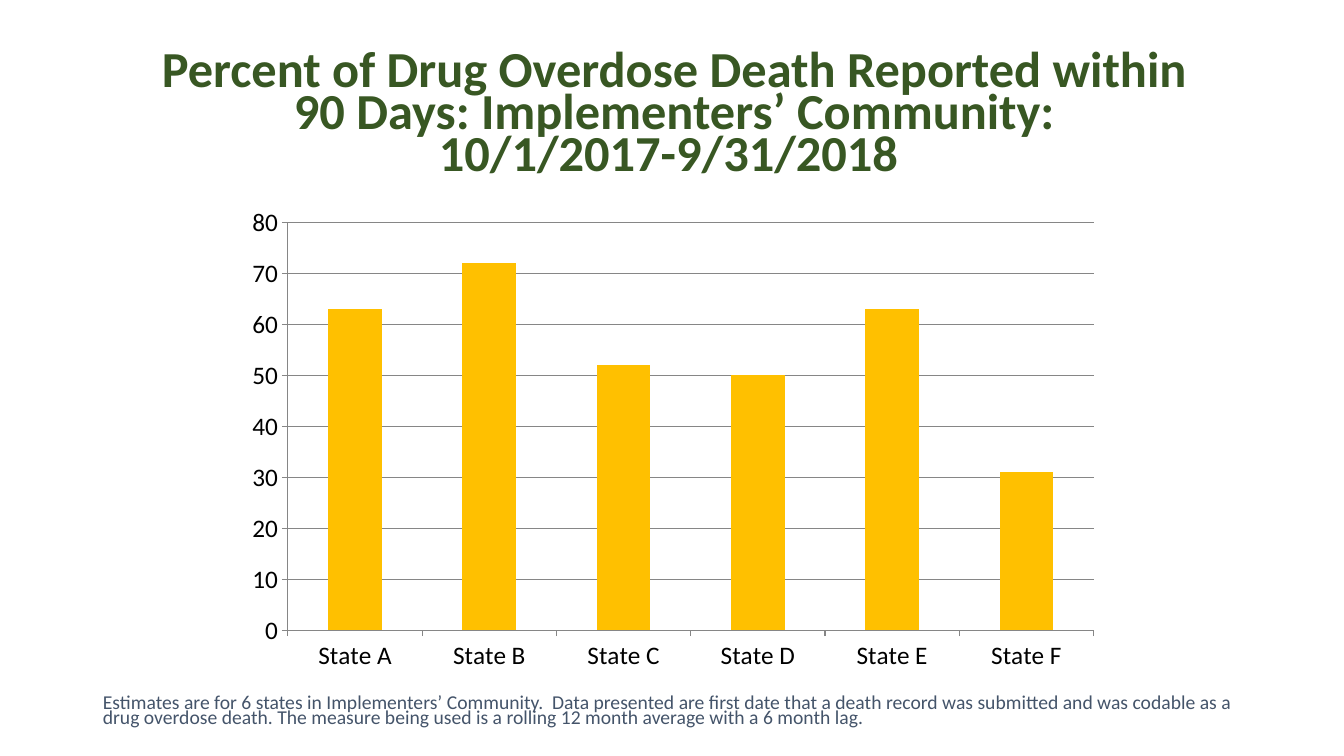
from pptx import Presentation
from pptx.chart.data import CategoryChartData
from pptx.dml.color import RGBColor
from pptx.enum.chart import XL_CHART_TYPE, XL_TICK_MARK
from pptx.enum.text import MSO_ANCHOR, MSO_AUTO_SIZE, PP_ALIGN
from pptx.util import Inches, Pt


def rgb(hex_color):
    return RGBColor.from_string(hex_color)


def style_text(frame, size, color, line_spacing, align):
    frame.word_wrap = True
    frame.auto_size = MSO_AUTO_SIZE.NONE
    frame.vertical_anchor = MSO_ANCHOR.BOTTOM
    paragraph = frame.paragraphs[0]
    paragraph.alignment = align
    paragraph.line_spacing = Pt(line_spacing)
    paragraph.font.name = "Calibri"
    paragraph.font.size = Pt(size)
    paragraph.font.color.rgb = rgb(color)
    return paragraph


prs = Presentation()
prs.slide_width, prs.slide_height = Inches(13.33), Inches(7.5)
slide = prs.slides.add_slide(prs.slide_layouts[5])

# Title
title = slide.shapes.title
title.left, title.top = Inches(1.23), Inches(0.37)
title.width, title.height = Inches(10.92), Inches(1.48)
title.text_frame.text = (
    "Percent of Drug Overdose Death Reported within 90 Days: "
    "Implementers’ Community:\v10/1/2017-9/31/2018 "
)
heading = style_text(title.text_frame, 36, "385723", 30, PP_ALIGN.CENTER)
heading.font.bold = True

# Footnote on the data
footnote = slide.shapes.add_textbox(Inches(0.67), Inches(6.64), Inches(12), Inches(0.64))
footnote.text_frame.text = (
    "Estimates are for 6 states in Implementers’ Community.  Data presented are "
    "first date that a death record was submitted and was codable as a drug "
    "overdose death. The measure being used is a rolling 12 month average with "
    "a 6 month lag."
)
footnote.text_frame.margin_left = Inches(0.35)
note = style_text(footnote.text_frame, 14, "44546A", 11, PP_ALIGN.LEFT)
note.space_before = Pt(10)

# Percent reported within 90 days, by state
percent_by_state = {
    "State A": 63, "State B": 72, "State C": 52,
    "State D": 50, "State E": 63, "State F": 31,
}
data = CategoryChartData()
data.categories = percent_by_state.keys()
data.add_series("Series 1", percent_by_state.values())
chart = slide.shapes.add_chart(
    XL_CHART_TYPE.COLUMN_CLUSTERED,
    Inches(2.33), Inches(1.96), Inches(8.69), Inches(4.79), data,
).chart
chart.has_title = False
chart.has_legend = False
chart.font.name = "Calibri"
chart.font.size = Pt(18)
chart.font.color.rgb = rgb("000000")

# Columns
columns = chart.plots[0]
columns.gap_width = 150
columns.vary_by_categories = False
columns.series[0].format.fill.solid()
columns.series[0].format.fill.fore_color.rgb = rgb("FFC000")

# Axes and gridlines
percent_axis = chart.value_axis
percent_axis.minimum_scale, percent_axis.maximum_scale = 0, 80
percent_axis.major_unit = 10
percent_axis.has_major_gridlines = True
for axis in (chart.category_axis, percent_axis):
    axis.major_tick_mark = XL_TICK_MARK.OUTSIDE
    axis.minor_tick_mark = XL_TICK_MARK.NONE
for ruled in (chart.category_axis, percent_axis, percent_axis.major_gridlines):
    ruled.format.line.color.rgb = rgb("868686")
    ruled.format.line.width = Pt(0.75)

prs.save("out.pptx")
